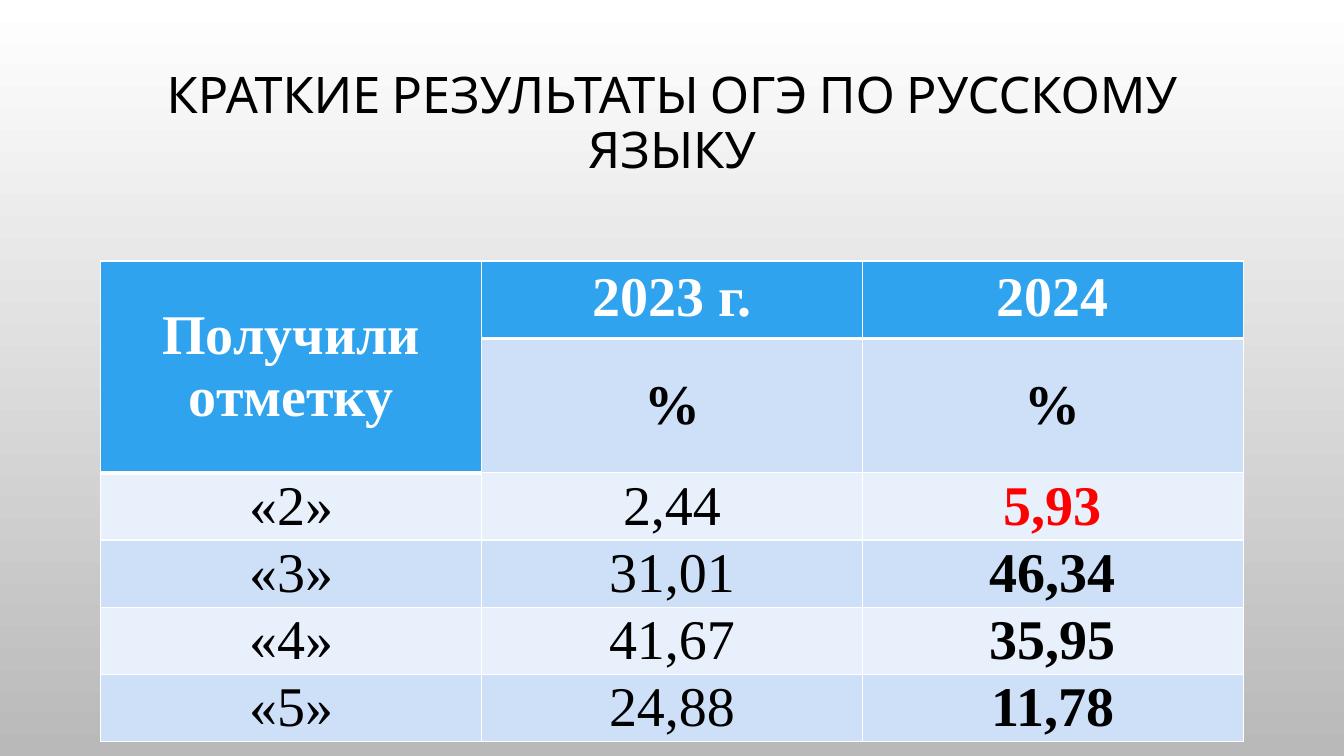
"""Build the slide with the Russian language exam results table."""
from lxml import etree
from pptx import Presentation
from pptx.dml.color import RGBColor
from pptx.enum.text import MSO_ANCHOR, PP_ALIGN
from pptx.oxml.ns import qn
from pptx.util import Pt

MIDDLE = MSO_ANCHOR.MIDDLE
CENTER = PP_ALIGN.CENTER
WHITE = RGBColor(0xFF, 0xFF, 0xFF)
BLACK = RGBColor(0, 0, 0)
RED = RGBColor(0xFF, 0, 0)
GRAY = RGBColor(0xB9, 0xB9, 0xB9)
BLUE = RGBColor(0x2F, 0xA3, 0xEE)
BANDS = [RGBColor(0xCD, 0xE0, 0xF8), RGBColor(0xE8, 0xF0, 0xFC)]

HEADS = ["Получили отметку", "2023 г.", "2024"]
ROWS = [
    HEADS,
    ["", "%", "%"],
    ["«2»", "2,44", "5,93"],
    ["«3»", "31,01", "46,34"],
    ["«4»", "41,67", "35,95"],
    ["«5»", "24,88", "11,78"],
]
HEIGHTS = [51.5, 88.6] + [44.3] * 4


def write(frame, text, font="Times New Roman", size=40, color=BLACK,
          bold=False, space=1.0):
    frame.word_wrap = True
    para = frame.paragraphs[0]
    para.alignment = CENTER
    para.line_spacing = space
    para.font.size = Pt(size)
    run = para.add_run()
    run.text = text
    run.font.name = font
    run.font.size = Pt(size)
    run.font.bold = bold
    run.font.color.rgb = color


def border(cell, side, width):
    line = etree.SubElement(cell._tc.get_or_add_tcPr(), qn("a:ln" + side),
                            w=str(Pt(width)))
    fill = etree.SubElement(line, qn("a:solidFill"))
    etree.SubElement(fill, qn("a:srgbClr"), val=str(WHITE))


deck = Presentation()
deck.slide_width, deck.slide_height = Pt(960), Pt(540)
slide = deck.slides.add_slide(deck.slide_layouts[6])

back = slide.background.fill
back.gradient()
back.gradient_angle = 270
for stop, color, place in zip(back.gradient_stops, [WHITE, GRAY], [0, 1]):
    stop.color.rgb = color
    stop.position = place

title = slide.shapes.add_textbox(Pt(72), Pt(49), Pt(816), Pt(80)).text_frame
title.vertical_anchor = MIDDLE
write(title, "КРАТКИЕ РЕЗУЛЬТАТЫ ОГЭ ПО РУССКОМУ ЯЗЫКУ",
      font="Cabin", size=36, space=0.9)

table = slide.shapes.add_table(len(ROWS), len(HEADS), Pt(72), Pt(186.5),
                               Pt(816), Pt(sum(HEIGHTS))).table
table.first_row = table.horz_banding = False
for col in table.columns:
    col.width = Pt(272)

for r, (texts, height) in enumerate(zip(ROWS, HEIGHTS)):
    table.rows[r].height = Pt(height)
    for c, text in enumerate(texts):
        cell = table.cell(r, c)
        head = r == 0 or (r == 1 and c == 0)
        for side in "LRTB":
            border(cell, side, 3 if head and side == "B" else 1)
        cell.fill.solid()
        cell.fill.fore_color.rgb = BLUE if head else BANDS[(r + 1) % 2]
        if r or c == 0:
            cell.vertical_anchor = MIDDLE
            cell.margin_left = cell.margin_right = Pt(5)
            cell.margin_top = cell.margin_bottom = 0
        if text:
            ink = WHITE if head else RED if (r, c) == (2, 2) else BLACK
            write(cell.text_frame, text, color=ink, bold=r < 2 or c == 2)

table.cell(0, 0).merge(table.cell(1, 0))
deck.save("out.pptx")
